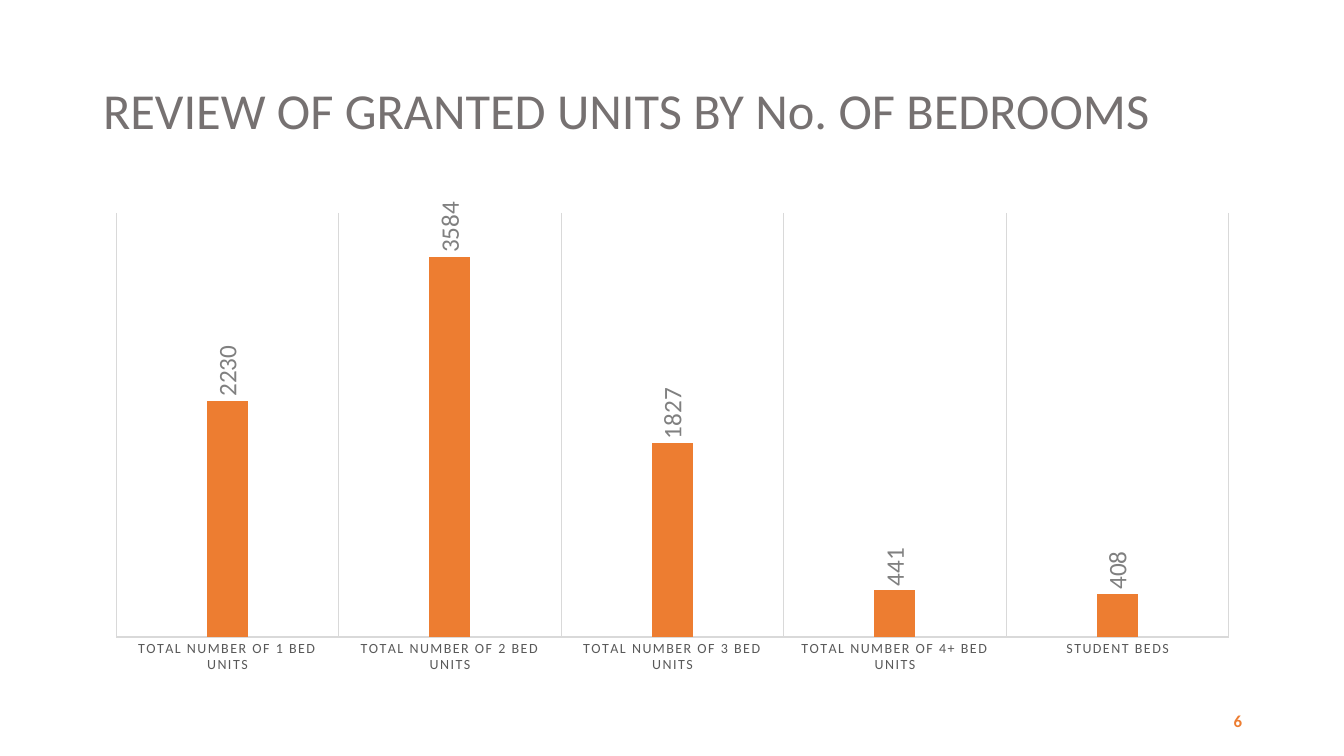
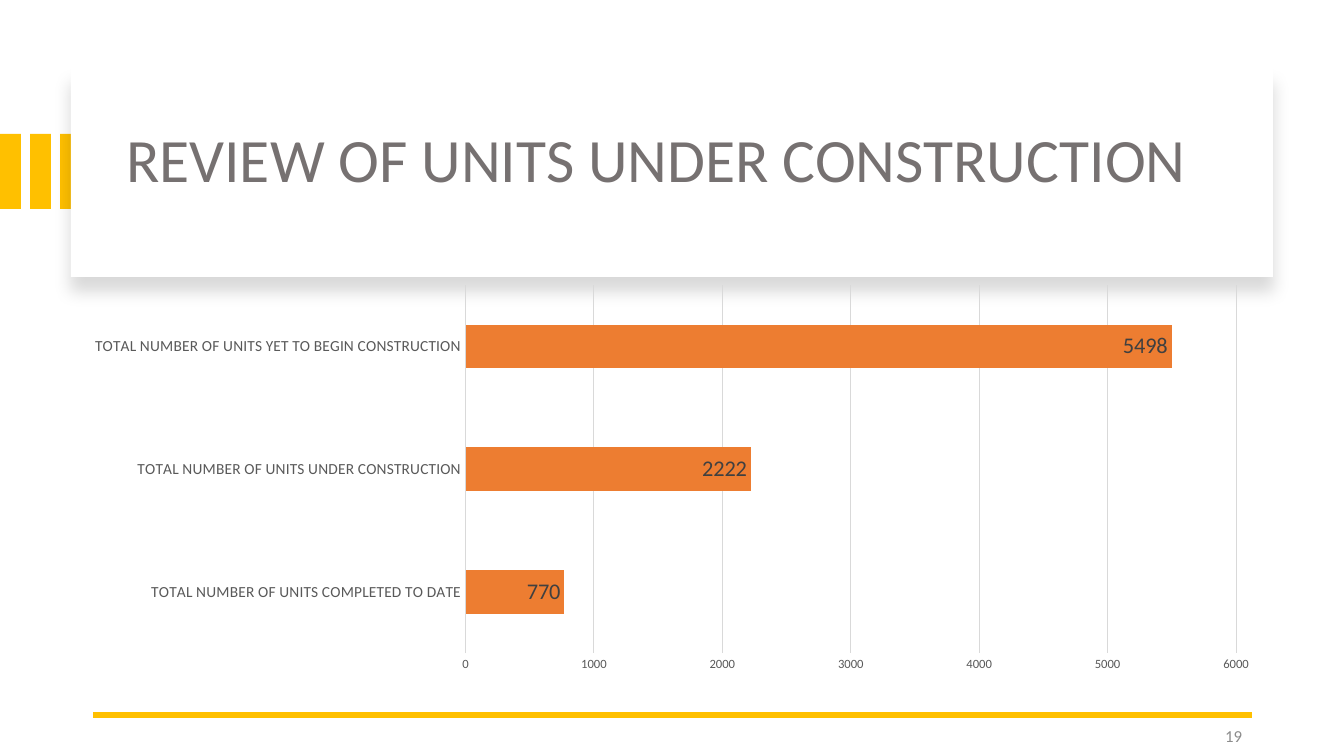
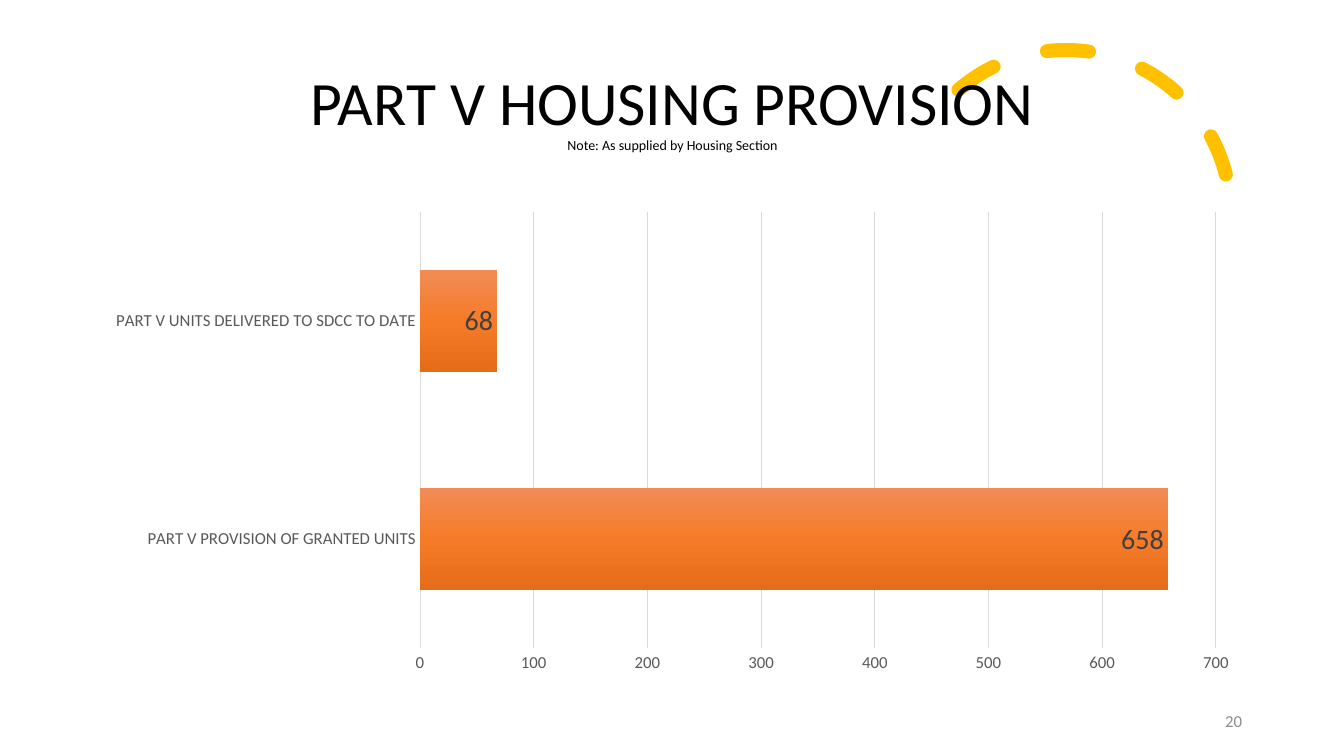
import pptx
import pptx.chart.data
import pptx.dml.color
import pptx.enum.chart
import pptx.enum.dml
import pptx.enum.shapes
import pptx.enum.text
import pptx.oxml
import pptx.oxml.ns
import pptx.util
from lxml import etree

RGBColor = pptx.dml.color.RGBColor
Pt = pptx.util.Pt
ALIGN = pptx.enum.text.PP_ALIGN
CHART = pptx.enum.chart.XL_CHART_TYPE
LABEL = pptx.enum.chart.XL_LABEL_POSITION
SHAPE = pptx.enum.shapes.MSO_SHAPE

# Shared style
FONT = "Calibri"
ORANGE = RGBColor(0xED, 0x7D, 0x31)
GOLD = RGBColor(0xFF, 0xC0, 0x00)
WHITE = RGBColor(0xFF, 0xFF, 0xFF)
BLACK = RGBColor(0x00, 0x00, 0x00)
TITLE_GREY = RGBColor(0x76, 0x71, 0x71)
AXIS_GREY = RGBColor(0x59, 0x59, 0x59)
GRID_GREY = RGBColor(0xD9, 0xD9, 0xD9)
NUMBER_GREY = RGBColor(0x8C, 0x8C, 0x8C)
LABEL_GREY = RGBColor(0x80, 0x80, 0x80)
LABEL_DARK = RGBColor(0x40, 0x40, 0x40)
BAR_GRADIENT = [(0, "F18C57"), (50, "F67B28"), (100, "E56C19")]

SLIDE_WIDTH, SLIDE_HEIGHT = 1344, 756
EMU_PER_PX = 12192000 / SLIDE_WIDTH
TITLE_BOX = (93, 40, 1159, 146)
CHART_BOX = (93, 202, 1159, 480)
NUMBER_BOX = (950, 701, 302, 40)

# Content
BEDROOMS = {
    "title": [("REVIEW OF GRANTED UNITS BY No. OF BEDROOMS", 36)],
    "number": "6",
    "chart": {
        "type": CHART.COLUMN_CLUSTERED, "gap": 444, "overlap": -90, "max": 4000,
        "data": [("TOTAL NUMBER OF 1 BED UNITS", 2230),
                 ("TOTAL NUMBER OF 2 BED UNITS", 3584),
                 ("TOTAL NUMBER OF 3 BED UNITS", 1827),
                 ("TOTAL NUMBER OF 4+ BED UNITS", 441),
                 ("STUDENT BEDS", 408)],
        "category_size": 10, "label_size": 18, "label_color": LABEL_GREY,
        "label_position": LABEL.OUTSIDE_END,
    },
}
CONSTRUCTION = {
    "title": [("REVIEW OF UNITS UNDER CONSTRUCTION", 44)],
    "number": "19",
    "chart": {
        "type": CHART.BAR_CLUSTERED, "gap": 182, "overlap": 0, "max": 6000,
        "data": [("TOTAL NUMBER OF UNITS COMPLETED TO DATE", 770),
                 ("TOTAL NUMBER OF UNITS UNDER CONSTRUCTION", 2222),
                 ("TOTAL NUMBER OF UNITS YET TO BEGIN CONSTRUCTION", 5498)],
        "category_size": 11, "value_size": 9, "major_unit": 1000,
        "label_size": 16, "label_color": LABEL_DARK,
        "label_position": LABEL.INSIDE_END,
    },
}
PART_V = {
    "title": [("PART V HOUSING PROVISION", 44),
              ("Note: As supplied by Housing Section", 10)],
    "number": "20",
    "chart": {
        "type": CHART.BAR_CLUSTERED, "gap": 115, "overlap": -20, "max": 700,
        "data": [("PART V PROVISION OF GRANTED UNITS", 658),
                 ("PART V UNITS DELIVERED TO SDCC TO DATE", 68)],
        "category_size": 12, "value_size": 12, "major_unit": 100,
        "label_size": 20, "label_color": LABEL_DARK,
        "label_position": LABEL.INSIDE_END, "gradient": BAR_GRADIENT,
    },
}


def px(*lengths):
    return [round(length * EMU_PER_PX) for length in lengths]


def style_font(font, size, color, bold=False):
    font.name, font.size, font.bold = FONT, Pt(size), bold
    font.color.rgb = color


def add_effects(shape):
    return etree.SubElement(shape._element.spPr, pptx.oxml.ns.qn("a:effectLst"))


def add_rectangle(slide, box, color):
    shape = slide.shapes.add_shape(SHAPE.RECTANGLE, *px(*box))
    shape.shadow.inherit = False
    shape.fill.solid()
    shape.fill.fore_color.rgb = color
    shape.line.fill.background()
    return shape


def place_title(slide, lines, color, box=TITLE_BOX, align=ALIGN.LEFT):
    title = slide.shapes.title
    slide.shapes._spTree.append(title._element)  # in front of the decoration
    title.left, title.top, title.width, title.height = px(*box)
    frame = title.text_frame
    frame.auto_size = pptx.enum.text.MSO_AUTO_SIZE.NONE
    frame.vertical_anchor = pptx.enum.text.MSO_ANCHOR.MIDDLE
    paragraph = frame.paragraphs[0]
    paragraph.alignment, paragraph.line_spacing = align, 0.9
    for index, (text, size) in enumerate(lines):
        if index:
            paragraph.add_line_break()
        run = paragraph.add_run()
        run.text = text
        style_font(run.font, size, color)


def add_number(slide, text, box=NUMBER_BOX, color=NUMBER_GREY, bold=False):
    frame = slide.shapes.add_textbox(*px(*box)).text_frame
    frame.word_wrap = True
    frame.vertical_anchor = pptx.enum.text.MSO_ANCHOR.MIDDLE
    paragraph = frame.paragraphs[0]
    paragraph.alignment = ALIGN.RIGHT
    run = paragraph.add_run()
    run.text = text
    style_font(run.font, 12, color, bold)


def style_grid(axis):
    axis.has_major_gridlines = True
    line = axis.major_gridlines.format.line
    line.width = Pt(0.75)
    line.color.rgb = GRID_GREY


def fill_gradient(series, stops):
    gradient = pptx.oxml.parse_xml(
        f'<a:gradFill {pptx.oxml.ns.nsdecls("a")} rotWithShape="1"><a:gsLst>'
        + "".join(f'<a:gs pos="{position * 1000}"><a:srgbClr val="{color}"/></a:gs>'
                  for position, color in stops)
        + '</a:gsLst><a:lin ang="5400000" scaled="0"/></a:gradFill>')
    series._element.get_or_add_spPr().insert(0, gradient)


def add_bar_chart(slide, content, box=CHART_BOX):
    data = pptx.chart.data.CategoryChartData()
    categories, values = zip(*content["data"])
    data.categories = categories
    data.add_series("Series 1", values)
    chart = slide.shapes.add_chart(content["type"], *px(*box), data).chart
    chart.has_legend = chart.has_title = False
    style_font(chart.font, 10, BLACK)

    # Bars and their labels
    plot = chart.plots[0]
    plot.vary_by_categories = False
    plot.gap_width, plot.overlap = content["gap"], content["overlap"]
    series = plot.series[0]
    series.invert_if_negative = False
    if "gradient" in content:
        fill_gradient(series, content["gradient"])
    else:
        series.format.fill.solid()
        series.format.fill.fore_color.rgb = ORANGE
    labels = series.data_labels
    labels.show_value = True
    labels.position = content["label_position"]
    style_font(labels.font, content["label_size"], content["label_color"])

    # Axes
    no_tick = pptx.enum.chart.XL_TICK_MARK.NONE
    category_axis, value_axis = chart.category_axis, chart.value_axis
    for axis in (category_axis, value_axis):
        axis.major_tick_mark = axis.minor_tick_mark = no_tick
    category_axis.format.line.width = Pt(0.75)
    category_axis.format.line.color.rgb = GRID_GREY
    style_font(category_axis.tick_labels.font, content["category_size"], AXIS_GREY)
    value_axis.minimum_scale, value_axis.maximum_scale = 0, content["max"]
    if "value_size" in content:
        value_axis.major_unit = content["major_unit"]
        value_axis.format.line.fill.background()
        style_font(value_axis.tick_labels.font, content["value_size"], AXIS_GREY)
        style_grid(value_axis)
    else:
        # Upright columns: no value axis, upright labels, spaced category names
        value_axis.has_major_gridlines = False
        value_axis.visible = False
        style_grid(category_axis)
        category_axis.tick_labels.font._element.set("spc", "120")
        body = labels._element.get_or_add_txPr().bodyPr
        body.set("rot", "-5400000")
        body.set("vert", "horz")


def build_bedrooms(slide):
    add_number(slide, BEDROOMS["number"], color=ORANGE, bold=True)
    place_title(slide, BEDROOMS["title"], TITLE_GREY)
    add_bar_chart(slide, BEDROOMS["chart"])


def build_construction(slide):
    # Gold stripes running under the title panel
    for index in range(3):
        add_rectangle(slide, (index * 30, 134, 21, 75), GOLD)
    panel = add_rectangle(slide, (71, 68, 1202, 209), WHITE)
    effects = panel._element.spPr.find(pptx.oxml.ns.qn("a:effectLst"))
    effects.append(pptx.oxml.parse_xml(
        f'<a:outerShdw {pptx.oxml.ns.nsdecls("a")} blurRad="{Pt(11)}" dist="{Pt(10)}" '
        'dir="5400000" algn="t" rotWithShape="0"><a:srgbClr val="000000">'
        '<a:alpha val="15000"/></a:srgbClr></a:outerShdw>'))
    place_title(slide, CONSTRUCTION["title"], TITLE_GREY, (116, 117, 1122, 92))

    # Footer rule
    rule = slide.shapes.add_connector(
        pptx.enum.shapes.MSO_CONNECTOR.STRAIGHT, *px(1252, 715, 93, 715))
    rule.line.color.rgb = GOLD
    rule.line.width = Pt(4.5)
    add_effects(rule)
    add_number(slide, CONSTRUCTION["number"], (950, 716, 302, 40))
    add_bar_chart(slide, CONSTRUCTION["chart"], (71, 277, 1202, 403))


def build_part_v(slide):
    # Dashed arc behind the title
    arc = slide.shapes.add_shape(SHAPE.ARC, *px(901, 50, 330, 330))
    arc.adjustments[0], arc.adjustments[1] = 146.13, 0
    arc.rotation = 345.8
    arc.shadow.inherit = False
    arc.fill.background()
    arc.line.color.rgb = GOLD
    arc.line.width = Pt(10)
    arc.line.dash_style = pptx.enum.dml.MSO_LINE.DASH
    arc.line._ln.set("cap", "rnd")
    place_title(slide, PART_V["title"], BLACK, align=ALIGN.CENTER)
    add_number(slide, PART_V["number"])
    add_bar_chart(slide, PART_V["chart"])


def main():
    presentation = pptx.Presentation()
    presentation.slide_width, presentation.slide_height = px(SLIDE_WIDTH, SLIDE_HEIGHT)
    title_only = presentation.slide_layouts[5]
    for build in (build_bedrooms, build_construction, build_part_v):
        build(presentation.slides.add_slide(title_only))
    presentation.save("out.pptx")


if __name__ == "__main__":
    main()
